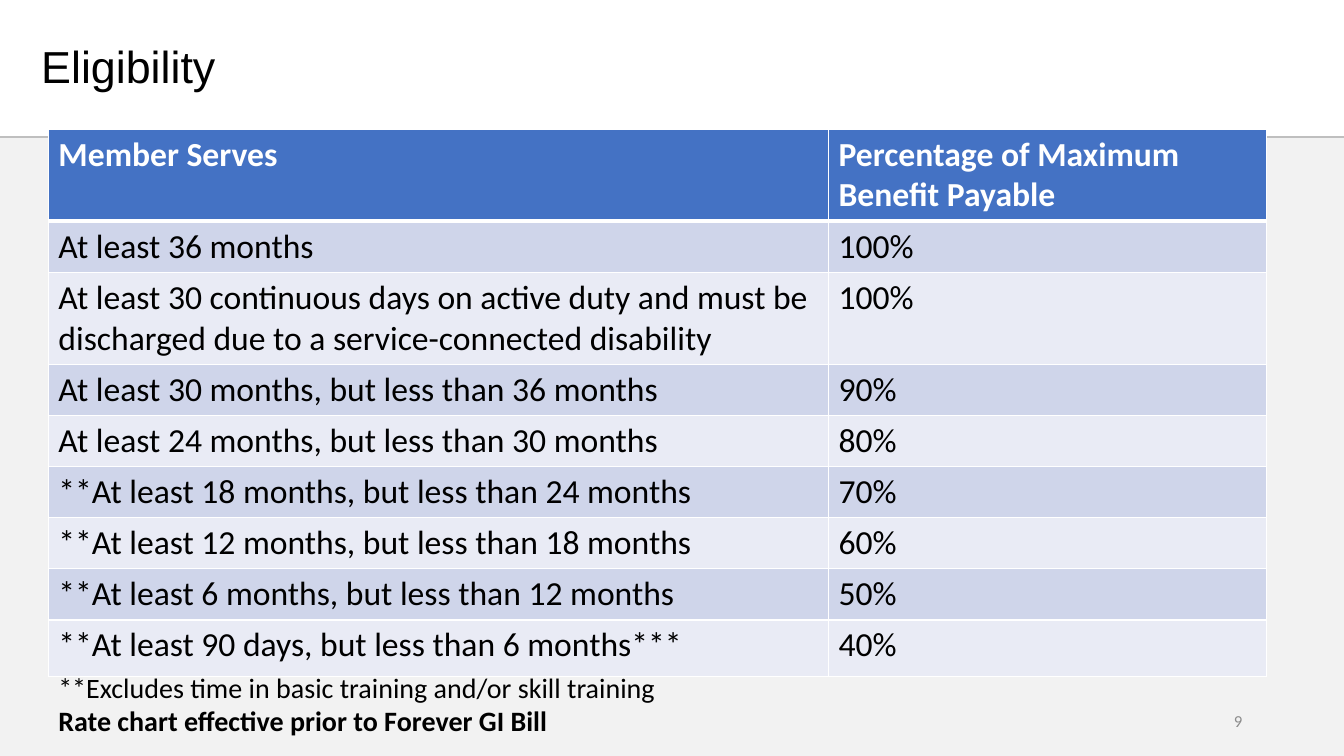
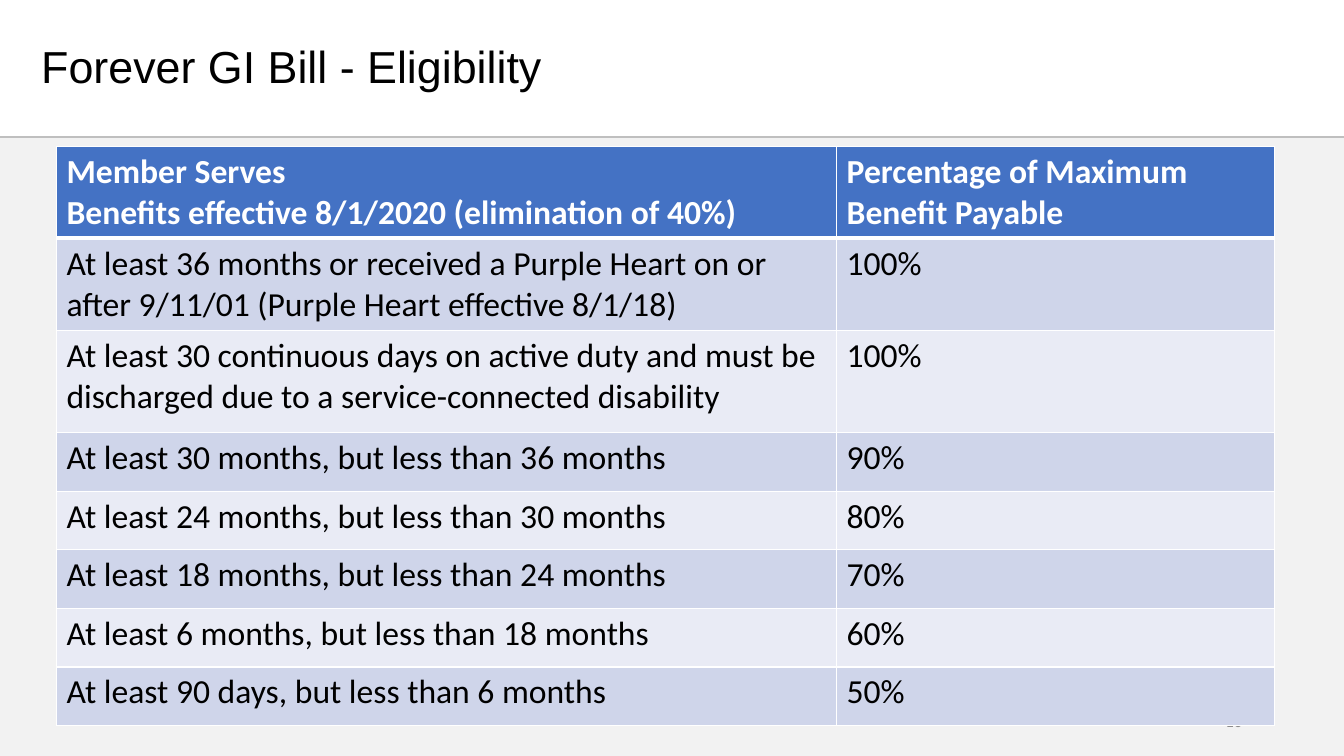
from dataclasses import dataclass

from lxml import etree
from pptx import Presentation, util as u
from pptx.dml.color import RGBColor
from pptx.enum import shapes, text
from pptx.oxml import ns


@dataclass(frozen=True)
class Theme:
    heading_font: str = "Arial"
    body_font: str = "Calibri"
    ink: str = "000000"
    white: str = "FFFFFF"
    panel: str = "F2F2F2"
    rule: str = "BFBFBF"
    muted: str = "8C8C8C"
    header: str = "4472C4"
    bands: tuple = ("E9EBF5", "CFD5EA")
    title_size: int = 32
    table_size: int = 24
    note_size: int = 20
    number_size: int = 12
    border: int = 1
    header_border: int = 3


theme = Theme()
presentation = Presentation()
presentation.slide_width = u.Inches(13.33)
presentation.slide_height = u.Inches(7.5)

# Grid of 100 columns by 100 rows
column = presentation.slide_width / 100
row = presentation.slide_height / 100


def write(frame, lines, size, color, font=theme.body_font, bold=()):
    """Fill a text frame with one paragraph per line; bold holds line indexes."""
    frame.word_wrap = True
    frame.text = "\n".join(lines)
    for index, paragraph in enumerate(frame.paragraphs):
        paragraph.font.name = font
        paragraph.font.size = u.Pt(size)
        paragraph.font.bold = index in bold
        paragraph.font.color.rgb = RGBColor.from_string(color)
    return frame


def place(left, top, width, height):
    """Turn grid columns and rows into slide lengths."""
    return [int(n) for n in (left * column, top * row, width * column, height * row)]


PANEL_TOP, RULE_TOP = 18.27, 18.13
COLUMN_WIDTHS = (58.05, 32.6)
ONE_LINE, ONE_LINE_TALL, TWO_LINES, TWO_LINES_TALL = 6.76, 7.75, 12.2, 13.5
PERCENTAGE_HEADING = ["Percentage of Maximum Benefit Payable"]
DISABILITY = ("At least 30 continuous days on active duty and must be "
              "discharged due to a service-connected disability")

pages = [
    dict(
        title="Eligibility", number="9", left=3.6, top=17.07,
        heading=["Member Serves"],
        heights=[TWO_LINES, ONE_LINE, TWO_LINES] + [ONE_LINE] * 5 + [7.47],
        rates=[
            ("At least 36 months", "100%"),
            (DISABILITY, "100%"),
            ("At least 30 months, but less than 36 months", "90%"),
            ("At least 24 months, but less than 30 months", "80%"),
            ("**At least 18 months, but less than 24 months", "70%"),
            ("**At least 12 months, but less than 18 months", "60%"),
            ("**At least 6 months, but less than 12 months", "50%"),
            ("**At least 90 days, but less than 6 months***", "40%"),
        ],
        notes=["**Excludes time in basic training and/or skill training",
               "Rate chart effective prior to Forever GI Bill"],
    ),
    dict(
        title="Forever GI Bill - Eligibility", number="16", left=4.2, top=19.33,
        heading=["Member Serves",
                 "Benefits effective 8/1/2020 (elimination of 40%)"],
        heights=[TWO_LINES, TWO_LINES, TWO_LINES_TALL] + [ONE_LINE_TALL] * 5,
        rates=[
            ("At least 36 months or received a Purple Heart on or after 9/11/01 "
             "(Purple Heart effective 8/1/18)", "100%"),
            (DISABILITY, "100%"),
            ("At least 30 months, but less than 36 months", "90%"),
            ("At least 24 months, but less than 30 months", "80%"),
            ("At least 18 months, but less than 24 months", "70%"),
            ("At least 6 months, but less than 18 months", "60%"),
            ("At least 90 days, but less than 6 months", "50%"),
        ],
        notes=[],
    ),
]

for page in pages:
    slide = presentation.slides.add_slide(presentation.slide_layouts[6])

    # Background panel, rule and page number
    panel = slide.shapes.add_shape(
        shapes.MSO_SHAPE.RECTANGLE, *place(0, PANEL_TOP, 100, 100 - PANEL_TOP))
    panel.shadow.inherit = False
    panel.fill.solid()
    panel.fill.fore_color.rgb = RGBColor.from_string(theme.panel)
    panel.line.fill.background()

    rule = slide.shapes.add_connector(
        shapes.MSO_CONNECTOR.STRAIGHT, *place(0, RULE_TOP, 100, RULE_TOP))
    rule.line.color.rgb = RGBColor.from_string(theme.rule)
    rule.line.width = u.Pt(1.5)
    etree.SubElement(rule._element.spPr, ns.qn("a:effectLst"))

    number = slide.shapes.add_textbox(*place(70.67, 92.67, 22.5, 5.33))
    frame = write(number.text_frame, [page["number"]], theme.number_size, theme.muted)
    frame.vertical_anchor = text.MSO_ANCHOR.MIDDLE
    frame.paragraphs[0].alignment = text.PP_ALIGN.RIGHT

    # Benefit table
    rows = [(page["heading"], PERCENTAGE_HEADING)]
    rows += [([service], [rate]) for service, rate in page["rates"]]
    table = slide.shapes.add_table(
        len(rows), len(COLUMN_WIDTHS),
        *place(page["left"], page["top"], sum(COLUMN_WIDTHS), sum(page["heights"]))).table
    for table_column, width in zip(table.columns, COLUMN_WIDTHS):
        table_column.width = int(width * column)
    for index, (height, contents) in enumerate(zip(page["heights"], rows)):
        is_header = index == 0
        table.rows[index].height = int(height * row)
        borders = dict(L=theme.border, R=theme.border,
                       T=theme.header_border if index == 1 else theme.border,
                       B=theme.header_border if is_header else theme.border)
        for cell, lines in zip(table.rows[index].cells, contents):
            for side, weight in borders.items():
                line = etree.SubElement(cell._tc.get_or_add_tcPr(), ns.qn(f"a:ln{side}"),
                                        w=str(u.Pt(weight)))
                fill = etree.SubElement(line, ns.qn("a:solidFill"))
                etree.SubElement(fill, ns.qn("a:srgbClr"), val=theme.white)
            cell.fill.solid()
            cell.fill.fore_color.rgb = RGBColor.from_string(
                theme.header if is_header else theme.bands[index % 2])
            write(cell.text_frame, lines, theme.table_size,
                  theme.white if is_header else theme.ink,
                  bold=range(len(lines)) if is_header else ())

    # Title and footnotes
    title = slide.shapes.add_textbox(*place(2.33, 2, 69.3, 14.27))
    frame = write(title.text_frame, [page["title"]], theme.title_size, theme.ink,
                  font=theme.heading_font)
    frame.vertical_anchor = text.MSO_ANCHOR.MIDDLE
    frame.paragraphs[0].line_spacing = 0.9

    if page["notes"]:
        notes = slide.shapes.add_textbox(*place(page["left"], 88, sum(COLUMN_WIDTHS), 10.27))
        write(notes.text_frame, page["notes"], theme.note_size, theme.ink, bold=(1,))

presentation.save("out.pptx")
